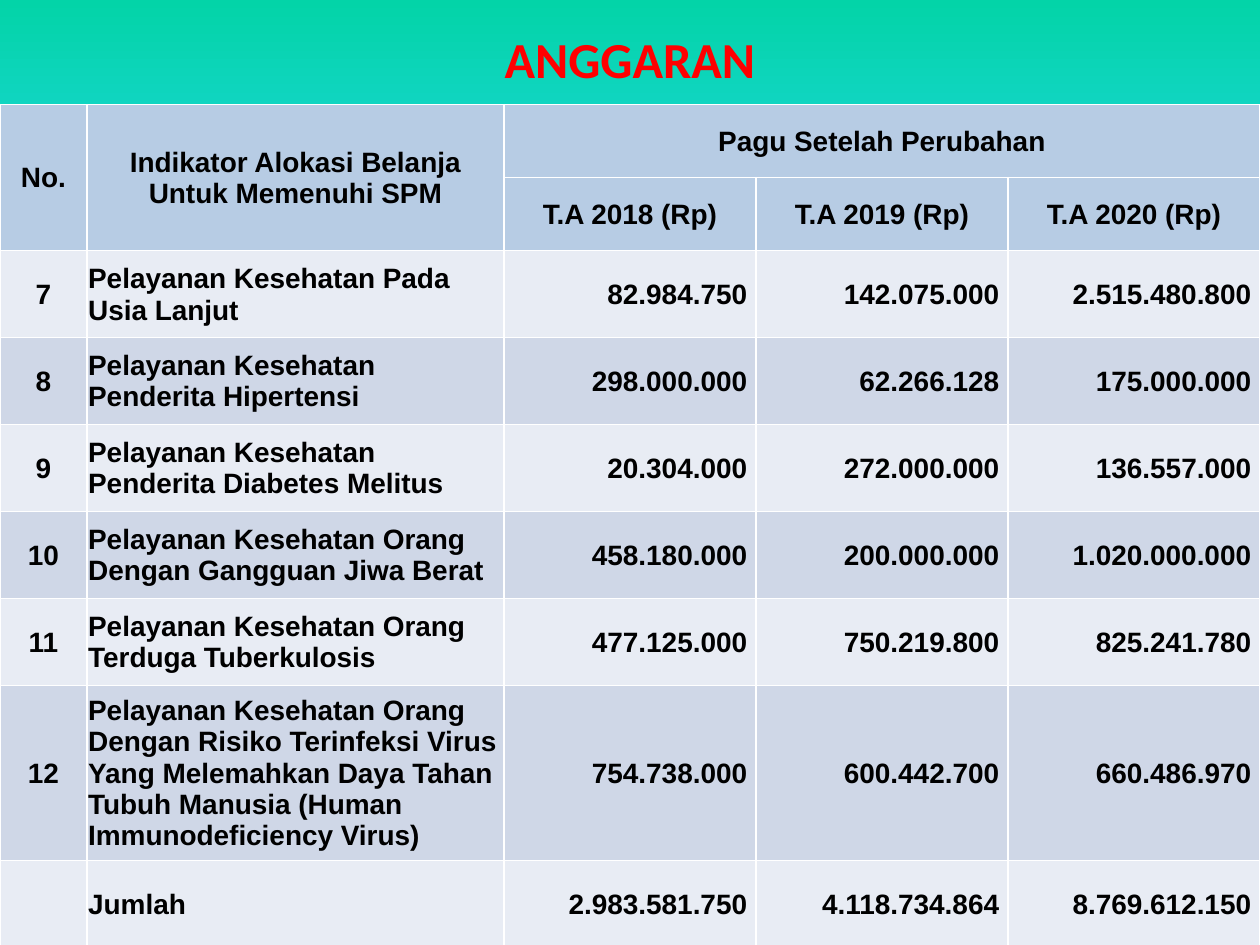
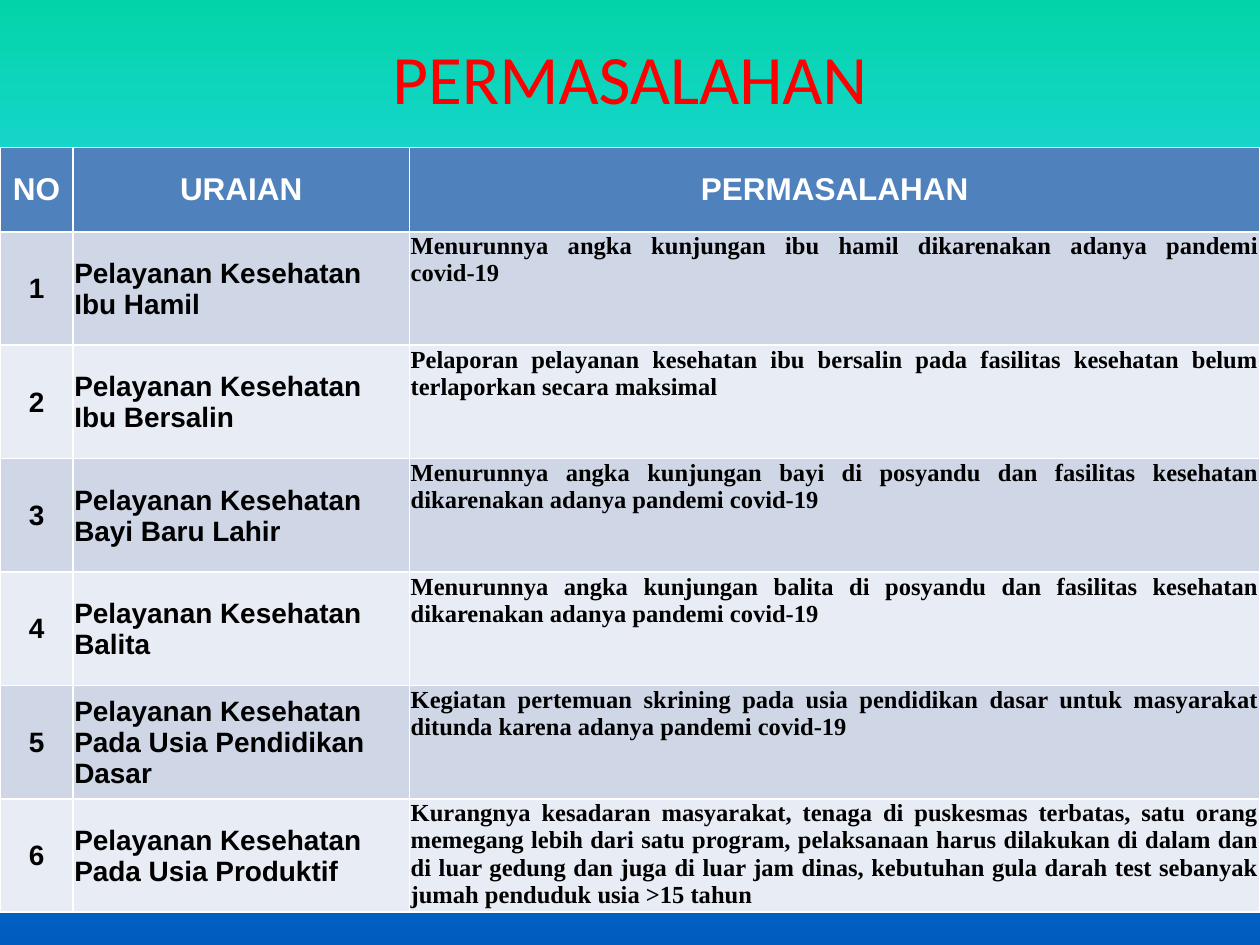
import lxml.etree
import pptx
import pptx.dml.color
import pptx.enum.text
import pptx.oxml.ns
import pptx.util

Inches = pptx.util.Inches
Align = pptx.enum.text.PP_ALIGN
Anchor = pptx.enum.text.MSO_ANCHOR

BACKGROUND_STOPS = [(0, "03D4A8"), (25, "21D6E0"), (75, "0087E6"), (100, "005CBF")]
RED, BLACK, WHITE = "FF0000", "000000", "FFFFFF"
BAND_FILLS = ["E8ECF4", "CFD7E7"]
TIGHT = (0.01, 0.01, 0.01, 0)
ROOMY = (0.1, 0.05, 0.1, 0.05)
AMOUNT_MARGINS = (0.01, 0.01, 0.07, 0)

NUMBER = dict(align=Align.CENTER)
SERVICE = dict(align=Align.LEFT)
AMOUNT = dict(align=Align.RIGHT, margins=AMOUNT_MARGINS)
PROBLEM = dict(align=Align.JUSTIFY, anchor=Anchor.TOP, size=14, font="Times New Roman")

BUDGET = dict(
    title="ANGGARAN",
    title_box=(0.25, 0.17, 9.5, 0.58),
    title_format=dict(size=28.8),
    top=0.83,
    columns=[0.69, 3.31, 2, 2, 2],
    heights=[0.58] * 2 + [0.69] * 5 + [1.39, 0.69],
    header=[
        ["No.", "Indikator Alokasi Belanja Untuk Memenuhi SPM", "Pagu Setelah Perubahan", "", ""],
        ["", "", "T.A 2018 (Rp)", "T.A 2019 (Rp)", "T.A 2020 (Rp)"],
    ],
    header_fill="B7CCE4",
    header_format=dict(align=Align.CENTER),
    merges=[((0, 0), (1, 0)), ((0, 1), (1, 1)), ((0, 2), (0, 4))],
    column_formats=[NUMBER, SERVICE, AMOUNT, AMOUNT, AMOUNT],
    rows=[
        ["7", "Pelayanan Kesehatan Pada Usia Lanjut", "82.984.750", "142.075.000", "2.515.480.800"],
        ["8", "Pelayanan Kesehatan Penderita Hipertensi", "298.000.000", "62.266.128", "175.000.000"],
        ["9", "Pelayanan Kesehatan Penderita Diabetes Melitus",
         "20.304.000", "272.000.000", "136.557.000"],
        ["10", "Pelayanan Kesehatan Orang Dengan Gangguan Jiwa Berat",
         "458.180.000", "200.000.000", "1.020.000.000"],
        ["11", "Pelayanan Kesehatan Orang Terduga Tuberkulosis",
         "477.125.000", "750.219.800", "825.241.780"],
        ["12", "Pelayanan Kesehatan Orang Dengan Risiko Terinfeksi Virus Yang Melemahkan "
               "Daya Tahan Tubuh Manusia (Human Immunodeficiency Virus)",
         "754.738.000", "600.442.700", "660.486.970"],
        ["", "Jumlah", "2.983.581.750", "4.118.734.864", "8.769.612.150"],
    ],
)

PROBLEMS = dict(
    title="PERMASALAHAN",
    title_box=(0.5, 0.3, 9, 0.62),
    title_format=dict(size=39.6, bold=False),
    top=1.17,
    columns=[0.58, 2.67, 6.75],
    heights=[0.67] + [0.9] * 6,
    header=[["NO", "URAIAN", "PERMASALAHAN"]],
    header_fill="4F81BD",
    header_format=dict(align=Align.CENTER, size=18, color=WHITE, margins=ROOMY),
    merges=[],
    column_formats=[NUMBER, SERVICE, PROBLEM],
    rows=[
        ["1", "Pelayanan Kesehatan Ibu Hamil",
         "Menurunnya angka kunjungan ibu hamil dikarenakan adanya pandemi covid-19"],
        ["2", "Pelayanan Kesehatan Ibu Bersalin",
         "Pelaporan pelayanan kesehatan ibu bersalin pada fasilitas kesehatan belum "
         "terlaporkan secara maksimal"],
        ["3", "Pelayanan Kesehatan Bayi Baru Lahir",
         "Menurunnya angka kunjungan bayi di posyandu dan fasilitas kesehatan "
         "dikarenakan adanya pandemi covid-19"],
        ["4", "Pelayanan Kesehatan Balita",
         "Menurunnya angka kunjungan balita di posyandu dan fasilitas kesehatan "
         "dikarenakan adanya pandemi covid-19"],
        ["5", "Pelayanan Kesehatan Pada Usia Pendidikan Dasar",
         "Kegiatan pertemuan skrining pada usia pendidikan dasar untuk masyarakat "
         "ditunda karena adanya pandemi covid-19"],
        ["6", "Pelayanan Kesehatan Pada Usia Produktif",
         "Kurangnya kesadaran masyarakat, tenaga di puskesmas terbatas, satu orang "
         "memegang lebih dari satu program, pelaksanaan harus dilakukan di dalam dan "
         "di luar gedung dan juga di luar jam dinas, kebutuhan gula darah test "
         "sebanyak jumah penduduk usia >15 tahun"],
    ],
)


def rgb(color):
    return pptx.dml.color.RGBColor.from_string(color)


def write(holder, text, *, align, anchor=Anchor.MIDDLE, size=16, font="Arial",
          color=BLACK, bold=True, margins=TIGHT):
    """Fill a table cell or a placeholder with one formatted paragraph."""
    holder.vertical_anchor = anchor
    (holder.margin_left, holder.margin_top,
     holder.margin_right, holder.margin_bottom) = map(Inches, margins)
    paragraph = holder.text_frame.paragraphs[0]
    paragraph.alignment = align
    # An empty cell still needs its font size, or it takes the larger default.
    style = paragraph.font
    if text:
        run = paragraph.add_run()
        run.text = text
        style = run.font
    style.name, style.size, style.bold = font, pptx.util.Pt(size), bold
    style.color.rgb = rgb(color)


def paint_background(master):
    fill = master.background.fill
    fill.gradient()
    fill.gradient_angle = 270
    qn = pptx.oxml.ns.qn
    stops = master.element.find(".//" + qn("a:gsLst"))
    for stop in list(stops):
        stops.remove(stop)
    for percent, color in BACKGROUND_STOPS:
        stop = lxml.etree.SubElement(stops, qn("a:gs"), pos=str(percent * 1000))
        lxml.etree.SubElement(stop, qn("a:srgbClr"), val=color)


def add_title(slide, text, box, text_format):
    title = slide.shapes.title
    title.left, title.top, title.width, title.height = map(Inches, box)
    frame = title.text_frame
    frame.auto_size = pptx.enum.text.MSO_AUTO_SIZE.NONE
    frame.vertical_anchor = Anchor.MIDDLE
    frame.word_wrap = True
    frame.text = text
    paragraph = frame.paragraphs[0]
    paragraph.alignment = Align.CENTER
    font = paragraph.runs[0].font
    font.name, font.size = "Calibri", pptx.util.Pt(text_format["size"])
    font.bold = text_format.get("bold", True)
    font.color.rgb = rgb(RED)


def add_content_table(slide, content):
    columns, heights = content["columns"], content["heights"]
    header_count = len(content["header"])
    table = slide.shapes.add_table(
        len(heights), len(columns), 0, Inches(content["top"]),
        Inches(sum(columns)), Inches(sum(heights))).table
    for column, width in zip(table.columns, columns):
        column.width = Inches(width)
    for row, height in zip(table.rows, heights):
        row.height = Inches(height)
    for first, last in content["merges"]:
        table.cell(*first).merge(table.cell(*last))

    for r, texts in enumerate(content["header"] + content["rows"]):
        in_header = r < header_count
        fill = content["header_fill"] if in_header else BAND_FILLS[r % 2]
        for c, text in enumerate(texts):
            cell = table.cell(r, c)
            cell.fill.solid()
            cell.fill.fore_color.rgb = rgb(fill)
            text_format = content["header_format"] if in_header else content["column_formats"][c]
            write(cell, text, **text_format)


def main():
    deck = pptx.Presentation()
    deck.slide_width, deck.slide_height = Inches(10), Inches(7.5)
    paint_background(deck.slide_master)
    title_only = deck.slide_layouts.get_by_name("Title Only")
    for content in (BUDGET, PROBLEMS):
        slide = deck.slides.add_slide(title_only)
        add_title(slide, content["title"], content["title_box"], content["title_format"])
        add_content_table(slide, content)
    deck.save("out.pptx")


if __name__ == "__main__":
    main()
